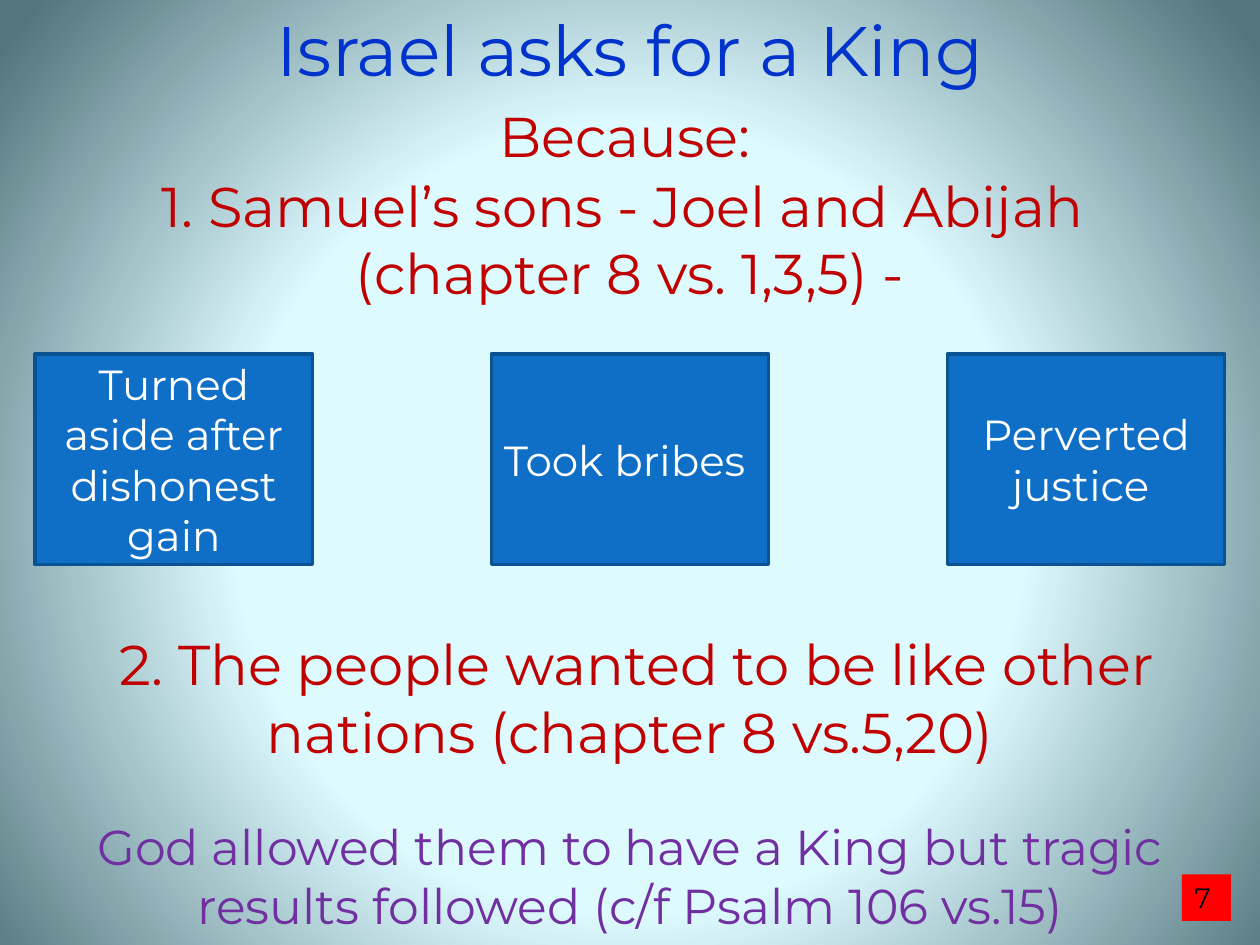
from pptx import Presentation, util as u
from pptx.dml.color import RGBColor
from pptx.enum import shapes, text
from pptx.oxml import parse_xml
from pptx.oxml.ns import nsdecls

FONT = "Montserrat"
TITLE_BLUE = RGBColor(0x00, 0x33, 0xCC)
CRIMSON = RGBColor(0xC0, 0x00, 0x00)
PURPLE = RGBColor(0x70, 0x30, 0xA0)
BOX_FILL = RGBColor(0x0F, 0x6F, 0xC6)
BOX_LINE = RGBColor(0x0B, 0x52, 0x92)
RED = RGBColor(0xFF, 0x00, 0x00)
BLACK = RGBColor(0x00, 0x00, 0x00)
WHITE = RGBColor(0xFF, 0xFF, 0xFF)
GLOW = [(0, RGBColor(0xDE, 0xFB, 0xFF)), (50, RGBColor(0xDD, 0xFA, 0xFF)),
        (100, RGBColor(0x52, 0x76, 0x7C))]
COLS, ROWS = 100, 75


class Deck:
    def __init__(self, width=10, height=7.5):
        self.prs = Presentation()
        self.prs.slide_width = u.Inches(width)
        self.prs.slide_height = u.Inches(height)
        self.s = self.prs.slides.add_slide(self.prs.slide_layouts[5])

    def place(self, x, y, w, h):
        col = self.prs.slide_width / COLS
        row = self.prs.slide_height / ROWS
        return [u.Emu(round(v)) for v in (x * col, y * row, w * col, h * row)]

    def background(self, stops):
        gs = "".join(f'<a:gs pos="{pos * 1000}"><a:srgbClr val="{color}"/></a:gs>'
                     for pos, color in stops)
        bg = parse_xml(
            f'<p:bg {nsdecls("p", "a")}><p:bgPr><a:gradFill rotWithShape="1">'
            f'<a:gsLst>{gs}</a:gsLst><a:path path="circle">'
            '<a:fillToRect l="10000" t="110000" r="10000" b="100000"/></a:path>'
            '</a:gradFill><a:effectLst/></p:bgPr></p:bg>')
        self.s.element.cSld.insert(0, bg)

    def set_text(self, sp, lines, size, color, align=text.PP_ALIGN.CENTER,
                 anchor=text.MSO_ANCHOR.TOP):
        tf = sp.text_frame
        tf.text = lines
        tf.word_wrap = True
        tf.auto_size = text.MSO_AUTO_SIZE.NONE
        tf.vertical_anchor = anchor
        for p in tf.paragraphs:
            p.alignment = align
            p.font.name = FONT
            p.font.size = u.Pt(size)
            p.font.color.rgb = color

    def title(self, lines, at, size, color):
        sp = self.s.shapes.title
        sp.left, sp.top, sp.width, sp.height = self.place(*at)
        self.set_text(sp, lines, size, color)

    def label(self, lines, at, size, color):
        self.set_text(self.s.shapes.add_textbox(*self.place(*at)), lines, size, color)

    def box(self, lines, at, size, color, fill, line=None, **style):
        sp = self.s.shapes.add_shape(shapes.MSO_SHAPE.RECTANGLE, *self.place(*at))
        sp.shadow.inherit = False
        sp.fill.solid()
        sp.fill.fore_color.rgb = fill
        if line is None:
            sp.line.fill.background()
        else:
            sp.line.color.rgb = line
            sp.line.width = u.Pt(2)
        self.set_text(sp, lines, size, color, **style)


def main():
    deck = Deck()
    deck.background(GLOW)
    deck.title("Israel asks for a King", (0, 0, COLS, 7.7), 40, TITLE_BLUE)
    deck.label("Because:", (36.6, 7.6, 26, 6.4), 32, CRIMSON)
    deck.label("1. Samuel’s sons - Joel and Abijah \n(chapter 8 vs. 1,3,5) -",
               (0, 13.1, COLS, 11.8), 32, CRIMSON)

    sins = ["Turned aside after dishonest gain", "Took bribes ", "Perverted justice "]
    margin, width = 2.8, 22
    step = (COLS - 2 * margin - width) / (len(sins) - 1)
    for i, sin in enumerate(sins):
        deck.box(sin, (margin + i * step, 28.1, width, 16.7), 24, WHITE,
                 BOX_FILL, BOX_LINE, anchor=text.MSO_ANCHOR.MIDDLE)

    deck.label(" 2. The people wanted to be like other nations (chapter 8 vs.5,20)",
               (0, 49.5, COLS, 17.2), 32, CRIMSON)
    deck.label("God allowed them to have a King but tragic results followed "
               "(c/f Psalm 106 vs.15)", (0, 64.3, COLS, 10.4), 28, PURPLE)
    deck.box("7", (93.8, 69.4, 3.9, 3.7), 16, BLACK, RED, align=text.PP_ALIGN.LEFT)
    deck.prs.save("out.pptx")


if __name__ == "__main__":
    main()
